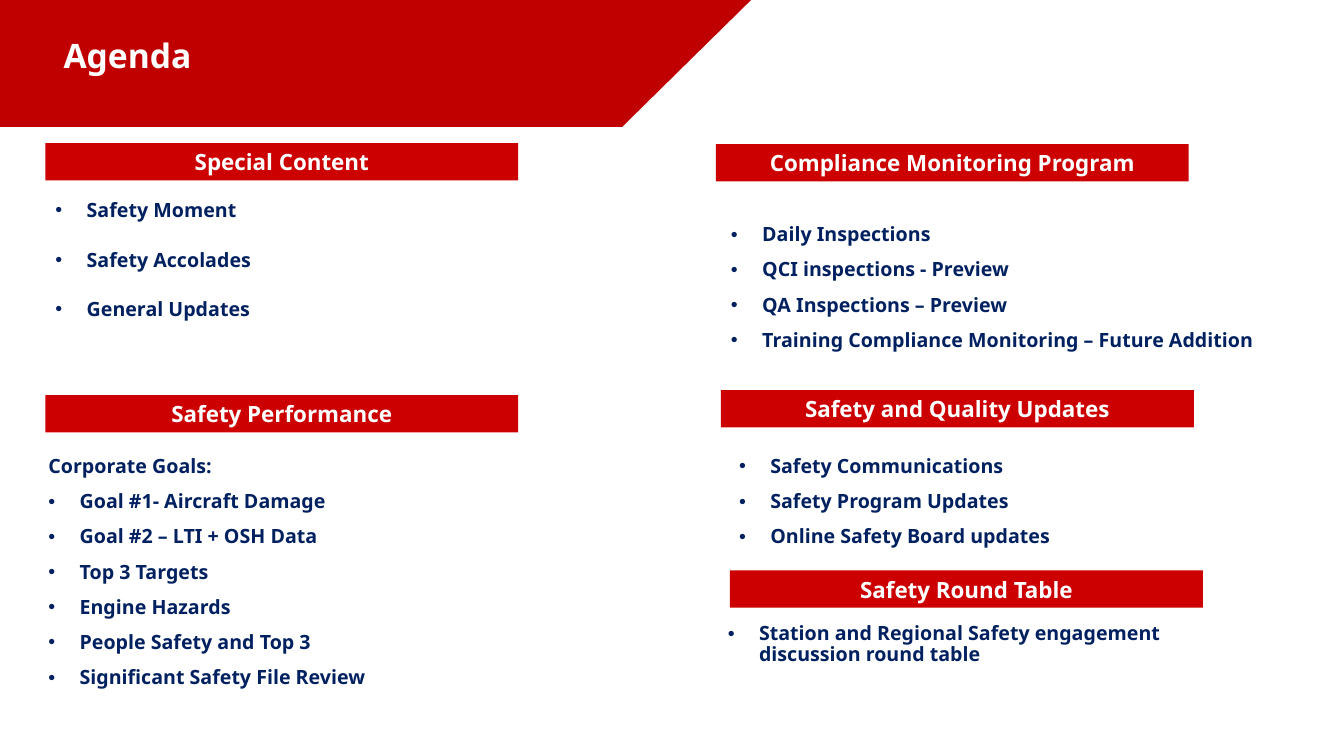
from lxml import etree
from pptx import Presentation
from pptx.dml.color import RGBColor
from pptx.enum.shapes import MSO_SHAPE
from pptx.enum.text import MSO_ANCHOR, MSO_AUTO_SIZE, PP_ALIGN
from pptx.oxml.ns import qn
from pptx.util import Inches, Pt

RECTANGLE = MSO_SHAPE.RECTANGLE
RIGHT_TRIANGLE = MSO_SHAPE.RIGHT_TRIANGLE
TOP, MIDDLE = MSO_ANCHOR.TOP, MSO_ANCHOR.MIDDLE
LEFT, CENTER = PP_ALIGN.LEFT, PP_ALIGN.CENTER
NO_AUTOFIT = MSO_AUTO_SIZE.NONE

BANNER_RED = RGBColor(0xC0, 0x00, 0x00)
HEADING_RED = RGBColor(0xCC, 0x00, 0x00)
NAVY = RGBColor(0x00, 0x20, 0x60)
WHITE = RGBColor(0xFF, 0xFF, 0xFF)

FONT = "Noto Sans"
COMPARISON_LAYOUT = 4
BANNER_HEIGHT = 1.26
BANNER_WIDTH = 6.17
HEADING_SIZE = (4.69, 0.37)
BULLET_INDENT = Inches(0.31)

SECTIONS = [
    {"heading": "Special Content", "heading_at": (0.45, 1.42),
     "list_box": (0.45, 1.8, 4.87, 1.8), "line_spacing": 1.5,
     "items": ["Safety Moment", "Safety Accolades", "General Updates"]},
    {"heading": "Safety Performance", "heading_at": (0.45, 3.92),
     "list_box": (0.38, 4.48, 6.18, 3.0), "intro": "Corporate Goals:",
     "items": ["Goal #1- Aircraft Damage", "Goal #2 – LTI + OSH Data",
               "Top 3 Targets", "Engine Hazards", "People Safety and Top 3",
               "Significant Safety File Review"]},
    {"heading": "Compliance Monitoring Program", "heading_at": (7.1, 1.43),
     "list_box": (7.15, 2.18, 5.54, 1.6),
     "items": ["Daily Inspections", "QCI inspections - Preview",
               "QA Inspections – Preview",
               "Training Compliance Monitoring – Future Addition"]},
    {"heading": "Safety and Quality Updates", "heading_at": (7.15, 3.87),
     "list_box": (7.23, 4.48, 4.61, 1.15),
     "items": ["Safety Communications", "Safety Program Updates",
               "Online Safety Board updates"]},
    {"heading": "Safety Round Table", "heading_at": (7.24, 5.66),
     "list_box": (7.12, 6.14, 4.64, 1.0),
     "items": ["Station and Regional Safety engagement discussion round table"]},
]


def place(shape, box):
    shape.left, shape.top, shape.width, shape.height = map(Inches, box)


def style_paragraph(paragraph, size, color, align):
    paragraph.alignment = align
    paragraph.font.name = FONT
    paragraph.font.size = Pt(size)
    paragraph.font.bold = True
    paragraph.font.color.rgb = color


def set_bullet(paragraph, bulleted):
    properties = paragraph._p.get_or_add_pPr()
    indent = BULLET_INDENT if bulleted else 0
    properties.set("marL", str(indent))
    properties.set("indent", str(-indent))
    if bulleted:
        etree.SubElement(properties, qn("a:buFont")).set("typeface", "Arial")
        etree.SubElement(properties, qn("a:buChar")).set("char", "•")
    else:
        etree.SubElement(properties, qn("a:buNone"))


def add_block(slide, preset, box, color):
    block = slide.shapes.add_shape(preset, *map(Inches, box))
    block.shadow.inherit = False
    block.fill.solid()
    block.fill.fore_color.rgb = color
    block.line.fill.background()
    return block


def add_banner(slide):
    body = add_block(slide, RECTANGLE, (0, 0, BANNER_WIDTH, BANNER_HEIGHT), BANNER_RED)
    slant = add_block(slide, RIGHT_TRIANGLE, (BANNER_WIDTH, 0, 1.28, BANNER_HEIGHT), BANNER_RED)
    slant._element.spPr.find(qn("a:xfrm")).set("flipV", "1")
    for position, part in enumerate((body, slant), start=2):
        slide.shapes._spTree.insert(position, part._element)


def fill_title(title, text):
    place(title, (0.53, 0.34, 5.61, 0.5))
    frame = title.text_frame
    frame.text = text
    frame.auto_size = NO_AUTOFIT
    frame.vertical_anchor = TOP
    paragraph = frame.paragraphs[0]
    paragraph.line_spacing = 0.9
    style_paragraph(paragraph, 24, WHITE, LEFT)


def add_heading(slide, text, at):
    heading = add_block(slide, RECTANGLE, at + HEADING_SIZE, HEADING_RED)
    frame = heading.text_frame
    frame.text = text
    frame.vertical_anchor = MIDDLE
    style_paragraph(frame.paragraphs[0], 16, WHITE, CENTER)


def fill_list(holder, box, items, intro=None, line_spacing=0.9):
    place(holder, box)
    frame = holder.text_frame
    frame.word_wrap = True
    frame.auto_size = NO_AUTOFIT
    frame.vertical_anchor = TOP
    lines = [intro] + items if intro else items
    for number, line in enumerate(lines):
        paragraph = frame.add_paragraph() if number else frame.paragraphs[0]
        paragraph.text = line
        paragraph.line_spacing = line_spacing
        paragraph.space_before = Pt(10 if number else 0)
        set_bullet(paragraph, line != intro)
        style_paragraph(paragraph, 14, NAVY, LEFT)


def main():
    deck = Presentation()
    deck.slide_width, deck.slide_height = Inches(13.33), Inches(7.5)
    slide = deck.slides.add_slide(deck.slide_layouts[COMPARISON_LAYOUT])
    title = slide.shapes.title
    bodies = [holder for holder in slide.placeholders
              if holder.placeholder_format.idx in range(1, 5)]

    add_banner(slide)
    fill_title(title, "Agenda")
    for section in SECTIONS:
        add_heading(slide, section["heading"], section["heading_at"])
        box = section["list_box"]
        holder = bodies.pop(0) if bodies else slide.shapes.add_textbox(*map(Inches, box))
        fill_list(holder, box, section["items"], section.get("intro"),
                  section.get("line_spacing", 0.9))
    deck.save("out.pptx")


if __name__ == "__main__":
    main()
